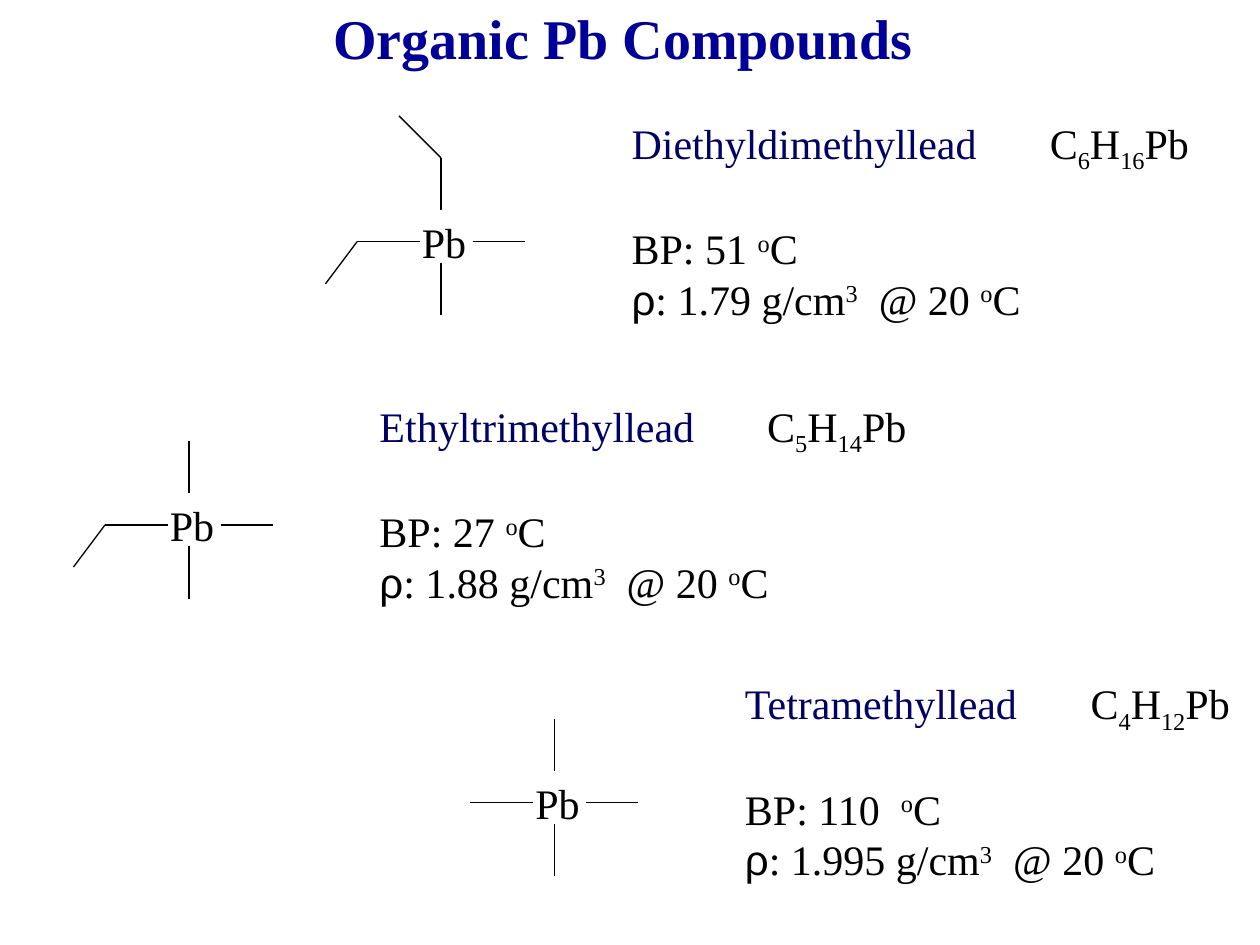
from dataclasses import dataclass

from lxml import etree
from pptx import Presentation
from pptx import util as u
from pptx.dml.color import RGBColor
from pptx.enum import shapes, text
from pptx.oxml import ns


@dataclass(frozen=True)
class Theme:
    font: str = "Times New Roman"
    greek_font: str = "Arial"
    title_color: str = "000099"
    name_color: str = "000066"
    ink: str = "000000"
    title_size: float = 32
    body_size: float = 24
    line_width: float = 0.75
    blank_line: float = 27.6


@dataclass(frozen=True)
class Compound:
    name: str
    center: tuple
    carbon: int
    hydrogen: int
    formula_tab: float
    boiling_point: str
    density: str
    ethyl_arms: tuple = ()


SUB, SUPER = -25000, 30000

# Bond ends in points, measured from the centre of the lead atom
METHYL_BONDS = (
    (0, -48, 0, -18),
    (0, 12, 0, 42),
    (18, 0, 48, 0),
    (-48, 0, -12, 0),
)
LEFT_ETHYL = (-66, 24, -48, 0)
TOP_ETHYL = (-24, -72, 0, -48)

COMPOUNDS = (
    Compound("Diethyldimethyllead", (252, 138.2), 6, 16, 239, "51 ", "1.79",
             (LEFT_ETHYL, TOP_ETHYL)),
    Compound("Ethyltrimethyllead", (108, 300), 5, 14, 221.5, "27 ", "1.88",
             (LEFT_ETHYL,)),
    Compound("Tetramethyllead", (316.8, 458.6), 4, 12, 197.5, "110  ", "1.995"),
)


class SlideBuilder:
    def __init__(self, page, theme):
        self.page = page
        self.theme = theme

    def style(self, span, color=None, size=None, font=None):
        span.font.name = font or self.theme.font
        span.font.size = u.Pt(size or self.theme.body_size)
        span.font.color.rgb = RGBColor.from_string(color or self.theme.ink)

    def title(self, wording, left, top, width, height):
        box = self.page.shapes.title
        box.left, box.top, box.width, box.height = map(
            u.Pt, (left, top, width, height))
        frame = box.text_frame
        frame.text = wording
        frame.auto_size = text.MSO_AUTO_SIZE.NONE
        frame.vertical_anchor = text.MSO_ANCHOR.MIDDLE
        frame.margin_right = u.Pt(15)
        para = frame.paragraphs[0]
        para.alignment = text.PP_ALIGN.CENTER
        span = para.runs[0]
        self.style(span, self.theme.title_color, self.theme.title_size)
        span.font.bold = True

    def text_box(self, left, top, width, height, wrap=True):
        box = self.page.shapes.add_textbox(
            *map(u.Pt, (left, top, width, height)))
        box.text_frame.word_wrap = wrap
        return box.text_frame

    def spans(self, para, *parts):
        """Add (wording, baseline shift, color, font) parts; only wording is required."""
        for wording, shift, color, font in (
                part + (None,) * (4 - len(part)) for part in parts):
            span = para.add_run()
            span.text = wording
            self.style(span, color, font=font)
            if shift:
                span.font._element.set("baseline", str(shift))

    def tab_stop(self, para, position):
        tabs = etree.SubElement(
            para._p.get_or_add_pPr(), ns.qn("a:tabLst"))
        etree.SubElement(tabs, ns.qn("a:tab"),
                         pos=str(u.Pt(position)), algn="l")

    def bond(self, x1, y1, x2, y2):
        line = self.page.shapes.add_connector(
            shapes.MSO_CONNECTOR.STRAIGHT, *map(u.Pt, (x1, y1, x2, y2)))
        line.line.color.rgb = RGBColor.from_string(self.theme.ink)
        line.line.width = u.Pt(self.theme.line_width)
        etree.SubElement(line._element.spPr, ns.qn("a:effectLst"))

    def molecule(self, compound):
        x, y = compound.center
        label = self.text_box(x - 18, y - 18, 39.6, 36, wrap=False)
        label.text = "Pb"
        self.style(label.paragraphs[0].runs[0])
        for x1, y1, x2, y2 in METHYL_BONDS + compound.ethyl_arms:
            self.bond(x + x1, y + y1, x + x2, y + y2)

    def properties(self, compound):
        x, y = compound.center
        frame = self.text_box(x + 101.8, y - 74.8, compound.formula_tab + 97, 122.4)
        heading = frame.paragraphs[0]
        self.tab_stop(heading, compound.formula_tab)
        self.spans(heading,
                   (compound.name, None, self.theme.name_color),
                   ("\tC",), (str(compound.carbon), SUB),
                   ("H",), (str(compound.hydrogen), SUB), ("Pb",))
        boiling = frame.add_paragraph()
        boiling.space_before = u.Pt(self.theme.blank_line)
        self.spans(boiling, (f"BP: {compound.boiling_point}",),
                   ("o", SUPER), ("C",))
        self.spans(frame.add_paragraph(),
                   ("ρ", None, None, self.theme.greek_font),
                   (f": {compound.density} g/cm",), ("3", SUPER),
                   ("  @ 20 ",), ("o", SUPER), ("C",))


def main():
    deck = Presentation()
    deck.slide_width, deck.slide_height = u.Pt(720), u.Pt(540)
    page = deck.slides.add_slide(deck.slide_layouts[5])
    builder = SlideBuilder(page, Theme())
    builder.title("Organic Pb Compounds", 54, -12, 612, 66)
    for compound in COMPOUNDS:
        builder.molecule(compound)
        builder.properties(compound)
    deck.save("out.pptx")


if __name__ == "__main__":
    main()
